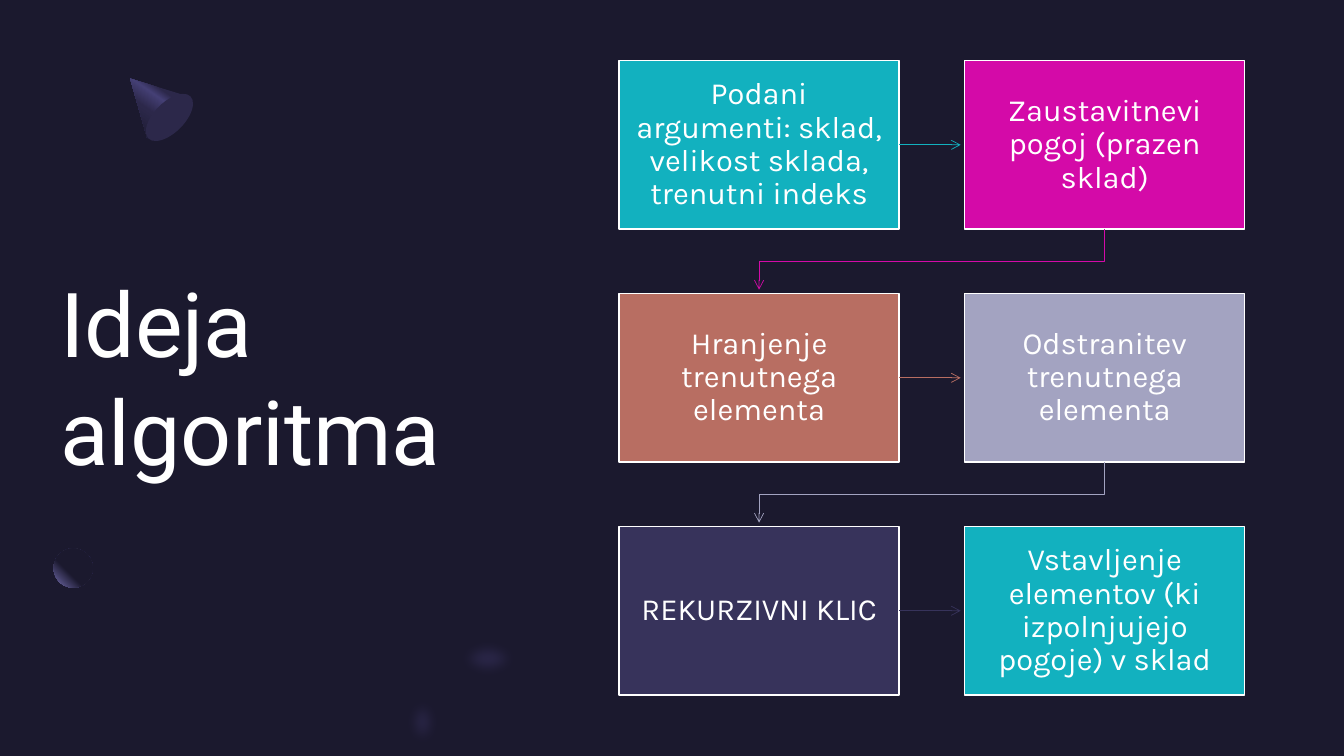
from dataclasses import dataclass

from lxml import etree
from pptx import Presentation
from pptx.dml.color import RGBColor
from pptx.enum.shapes import MSO_CONNECTOR, MSO_SHAPE
from pptx.enum.text import MSO_ANCHOR, PP_ALIGN
from pptx.oxml.ns import qn
from pptx.util import Cm, Pt

RECT, OVAL = MSO_SHAPE.RECTANGLE, MSO_SHAPE.OVAL
STRAIGHT = MSO_CONNECTOR.STRAIGHT
MIDDLE, CENTER = MSO_ANCHOR.MIDDLE, PP_ALIGN.CENTER
SIDE_RIGHT = 3

NIGHT = RGBColor(0x1B, 0x19, 0x2E)
WHITE = RGBColor(0xFF, 0xFF, 0xFF)
TEAL = RGBColor(0x12, 0xB1, 0xBF)
MAGENTA = RGBColor(0xD4, 0x0A, 0xA8)
CLAY = RGBColor(0xB8, 0x6E, 0x62)
LAVENDER = RGBColor(0xA3, 0xA3, 0xC1)
INDIGO = RGBColor(0x37, 0x33, 0x5B)
DUSK = RGBColor(0x2C, 0x28, 0x4A)
VIOLET = RGBColor(0x45, 0x40, 0x75)
LILAC = RGBColor(0x77, 0x71, 0xB2)

# Step grid, in centimetres
COLS = 2
LEFT, TOP = 15.6, 1.53
BOX_W, BOX_H = 7.06, 4.24
PITCH_X, PITCH_Y = 8.71, 5.87
ARROW_GAP = 0.1


@dataclass
class Step:
    text: str
    color: RGBColor


@dataclass
class Oval:
    left: float
    top: float
    width: float
    height: float
    color: RGBColor
    rotation: float = 0
    soft_edge: float = 0


STEPS = [
    Step("Podani argumenti: sklad, velikost sklada, trenutni indeks", TEAL),
    Step("Zaustavitnevi pogoj (prazen sklad)", MAGENTA),
    Step("Hranjenje trenutnega elementa", CLAY),
    Step("Odstranitev trenutnega elementa", LAVENDER),
    Step("REKURZIVNI KLIC", INDIGO),
    Step("Vstavljenje elementov (ki izpolnjujejo pogoje) v sklad", TEAL),
]
CONE_BASE = Oval(3.89, 2.21, 0.76, 1.5, DUSK, rotation=45)
BALL = Oval(1.35, 13.82, 0.99, 0.99, LILAC)
GLOWS = [
    Oval(11.35, 16.05, 1.9, 1.1, DUSK, soft_edge=0.3),
    Oval(10.15, 17.35, 1.0, 1.7, DUSK, soft_edge=0.3),
]


def set_gradient(shape, stops: list, direction: str, **attrs: str) -> None:
    """Fill a shape with (percent, colour) stops, along a:lin or a:path."""
    shape.fill.solid()
    solid = shape._element.spPr.find(qn("a:solidFill"))
    grad = etree.Element(qn("a:gradFill"))
    gs_list = etree.SubElement(grad, qn("a:gsLst"))
    for percent, color in stops:
        gs = etree.SubElement(gs_list, qn("a:gs"), pos=str(percent * 1000))
        etree.SubElement(gs, qn("a:srgbClr"), val=str(color))
    way = etree.SubElement(grad, qn(direction), **attrs)
    if direction == "a:path":
        etree.SubElement(way, qn("a:fillToRect"), l="100000", b="100000")
    solid.getparent().replace(solid, grad)


def add_oval(s, oval: Oval):
    sp = s.shapes.add_shape(OVAL, Cm(oval.left), Cm(oval.top),
                            Cm(oval.width), Cm(oval.height))
    sp.rotation = oval.rotation
    sp.shadow.inherit = False
    sp.fill.solid()
    sp.fill.fore_color.rgb = oval.color
    sp.line.fill.background()
    if oval.soft_edge:
        effects = sp._element.spPr.find(qn("a:effectLst"))
        etree.SubElement(effects, qn("a:softEdge"), rad=str(Cm(oval.soft_edge)))
    return sp


def add_polyline(s, points: list, close: bool):
    start, *rest = [(Cm(x), Cm(y)) for x, y in points]
    fb = s.shapes.build_freeform(*start)
    fb.add_line_segments(rest, close=close)
    sp = fb.convert_to_shape()
    sp.shadow.inherit = False
    return sp


def style_arrow(shape, color: RGBColor) -> None:
    shape.line.color.rgb = color
    shape.line.width = Pt(0.5)
    ln = shape._element.spPr.find(qn("a:ln"))
    etree.SubElement(ln, qn("a:tailEnd"), type="arrow")


def add_box(s, step: Step, left: float, top: float):
    sp = s.shapes.add_shape(RECT, Cm(left), Cm(top), Cm(BOX_W), Cm(BOX_H))
    sp.shadow.inherit = False
    sp.fill.solid()
    sp.fill.fore_color.rgb = step.color
    sp.line.color.rgb = WHITE
    sp.line.width = Pt(1)
    tf = sp.text_frame
    tf.word_wrap = True
    tf.vertical_anchor = MIDDLE
    tf.margin_left = tf.margin_right = tf.margin_top = tf.margin_bottom = Cm(0.36)
    p = tf.paragraphs[0]
    p.text = step.text
    p.alignment = CENTER
    p.line_spacing = 0.9
    p.font.name, p.font.size, p.font.color.rgb = "Karla", Pt(22), WHITE
    return sp


def add_arrow_right(s, box, step: Step, left: float, top: float) -> None:
    y = Cm(top + BOX_H / 2)
    cx = s.shapes.add_connector(STRAIGHT, Cm(left + BOX_W), y,
                                Cm(left + PITCH_X - ARROW_GAP), y)
    cx.begin_connect(box, SIDE_RIGHT)
    style_arrow(cx, step.color)
    etree.SubElement(cx._element.spPr, qn("a:effectLst"))


def add_arrow_next_row(s, step: Step, left: float, top: float) -> None:
    x1, x2 = left + BOX_W / 2, LEFT + BOX_W / 2
    bottom, next_top = top + BOX_H, top + PITCH_Y
    bend = (bottom + next_top) / 2
    sp = add_polyline(s, [(x1, bottom), (x1, bend), (x2, bend),
                          (x2, next_top - ARROW_GAP)], close=False)
    sp.fill.background()
    style_arrow(sp, step.color)


def add_title(s, text: str) -> None:
    tf = s.shapes.add_textbox(Cm(1.52), Cm(4.22), Cm(12.6), Cm(10.49)).text_frame
    tf.word_wrap = True
    tf.vertical_anchor = MIDDLE
    tf.margin_left = tf.margin_right = tf.margin_top = tf.margin_bottom = 0
    p = tf.paragraphs[0]
    p.text = text
    p.font.name, p.font.size, p.font.color.rgb = "Roboto", Pt(64), WHITE


def add_decoration(s) -> None:
    cone = add_polyline(s, [(3.28, 1.98), (4.78, 2.44), (3.71, 3.48)], close=True)
    cone.line.fill.background()
    set_gradient(cone, [(30, DUSK), (40, VIOLET), (60, DUSK), (100, NIGHT)],
                 "a:lin", ang=str(125 * 60000), scaled="0")
    add_oval(s, CONE_BASE)
    ball = add_oval(s, BALL)
    set_gradient(ball, [(60, NIGHT), (100, LILAC)], "a:path", path="circle")
    for glow in GLOWS:
        add_oval(s, glow)


def main() -> None:
    prs = Presentation()
    prs.slide_width, prs.slide_height = Cm(33.87), Cm(19.05)
    s = prs.slides.add_slide(prs.slide_layouts[6])
    s.background.fill.solid()
    s.background.fill.fore_color.rgb = NIGHT

    add_title(s, "Ideja algoritma")
    add_decoration(s)

    # Steps run row by row, each with an arrow to the next one
    for i, step in enumerate(STEPS):
        row, col = divmod(i, COLS)
        left, top = LEFT + col * PITCH_X, TOP + row * PITCH_Y
        box = add_box(s, step, left, top)
        if col < COLS - 1:
            add_arrow_right(s, box, step, left, top)
        elif i < len(STEPS) - 1:
            add_arrow_next_row(s, step, left, top)

    prs.save("out.pptx")


if __name__ == "__main__":
    main()
